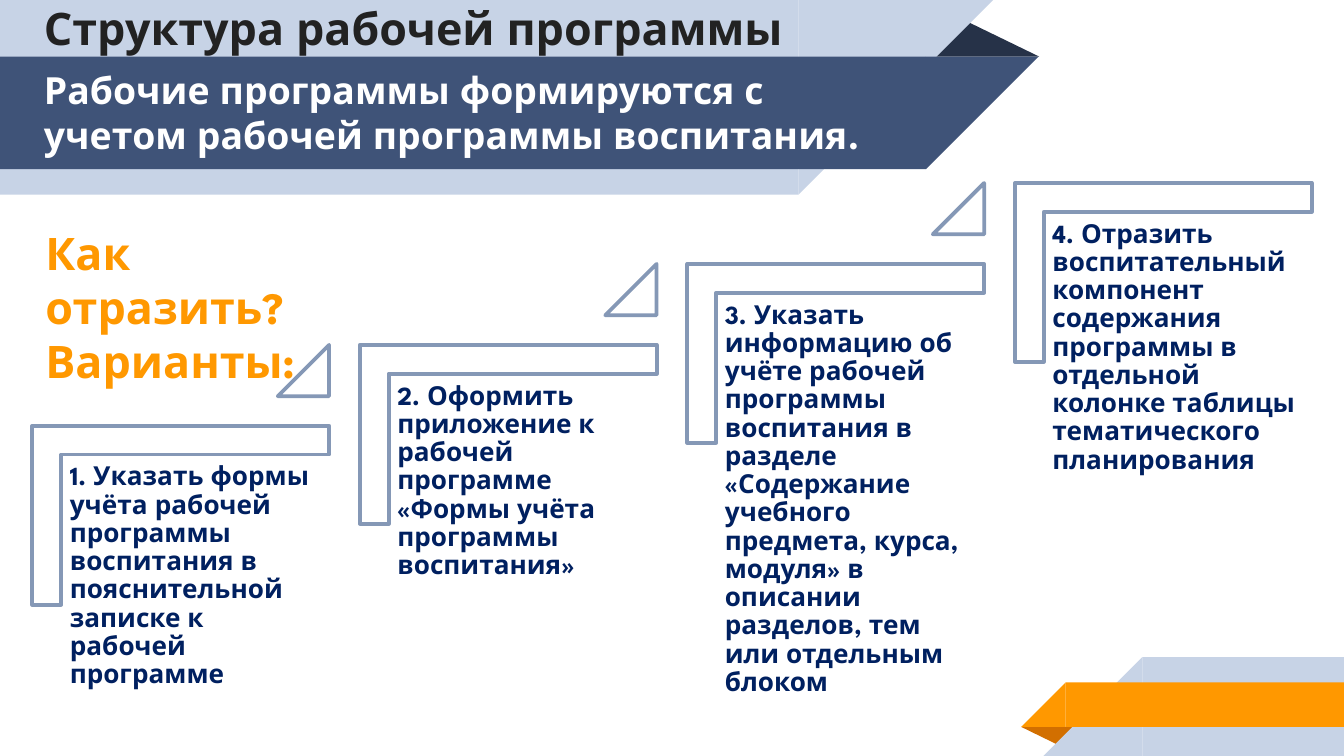
from dataclasses import dataclass

from pptx import Presentation
from pptx.dml.color import RGBColor
from pptx.enum.shapes import MSO_SHAPE
from pptx.enum.text import MSO_ANCHOR, MSO_AUTO_SIZE, PP_ALIGN
from pptx.util import Cm, Pt

RECTANGLE = MSO_SHAPE.RECTANGLE
RIGHT_TRIANGLE = MSO_SHAPE.RIGHT_TRIANGLE
TRIANGLE = MSO_SHAPE.ISOSCELES_TRIANGLE
CORNER = MSO_SHAPE.CORNER
TOP, MIDDLE = MSO_ANCHOR.TOP, MSO_ANCHOR.MIDDLE
LEFT = PP_ALIGN.LEFT
NO_AUTOFIT = MSO_AUTO_SIZE.NONE
TITLE_ONLY = 5


@dataclass(frozen=True)
class Theme:
    """Colours, font and type sizes of the deck."""
    font: str = "League Spartan"
    ink: str = "222222"
    white: str = "FFFFFF"
    pale: str = "C7D3E6"
    navy: str = "3F5378"
    navy_fold: str = "263248"
    orange: str = "FF9800"
    orange_fold: str = "D26F00"
    outline: str = "8598B6"
    step_text: str = "002060"
    heading_size: int = 24
    subtitle_size: int = 20
    step_size: int = 14


THEME = Theme()
SLIDE_WIDTH, SLIDE_HEIGHT = 25.4, 14.29
STEP_LEFT, STEP_TOP = 0.61, 8.05
STEP_RIGHT, STEP_RISE = 6.19, 1.53
STEP_WIDTH, STEP_HEIGHT = 5.61, 3.38
STEP_INDENT = 0.56
ARROW_SIZE = 0.97
STEPS = (
    "1. Указать формы учёта рабочей программы воспитания в пояснительной "
    "записке к рабочей программе",
    "2. Оформить приложение к рабочей программе «Формы учёта программы "
    "воспитания»",
    "3. Указать информацию об учёте рабочей программы воспитания в разделе "
    "«Содержание учебного предмета, курса, модуля» в описании разделов, тем "
    "или отдельным блоком",
    "4. Отразить воспитательный компонент содержания программы в отдельной "
    "колонке таблицы тематического планирования",
)


def add_figure(page, kind, left, top, width, height, color,
               rotation=0, adjustments=(), line=None):
    """Add a filled preset shape, outlined only when a line colour is given."""
    figure = page.shapes.add_shape(kind, Cm(left), Cm(top), Cm(width), Cm(height))
    figure.shadow.inherit = False
    figure.rotation = rotation
    for index, value in enumerate(adjustments):
        figure.adjustments[index] = value
    figure.fill.solid()
    figure.fill.fore_color.rgb = RGBColor.from_string(color)
    if line:
        figure.line.color.rgb = RGBColor.from_string(line)
        figure.line.width = Pt(2)
    else:
        figure.line.fill.background()


def add_right_band(page, top, width, height, color):
    """Add a band from the left edge with a slanted right end."""
    add_figure(page, RECTANGLE, 0, top, width, height, color)
    add_figure(page, RIGHT_TRIANGLE, width, top, height, height, color, 90)


def add_left_band(page, left, top, height, color):
    """Add a band to the right edge with a slanted left end."""
    add_figure(page, RECTANGLE, left, top, SLIDE_WIDTH - left, height, color)
    add_figure(page, RIGHT_TRIANGLE, left - height, top, height, height, color, 270)


def write_text(box, lines, size, color, inset=(0.25, 0.13), anchor=TOP, spacing=1.0):
    """Fill a box with bold left-aligned paragraphs."""
    frame = box.text_frame
    frame.word_wrap = True
    frame.auto_size = NO_AUTOFIT
    frame.vertical_anchor = anchor
    frame.margin_left = frame.margin_right = Cm(inset[0])
    frame.margin_top = frame.margin_bottom = Cm(inset[1])
    frame.text = "\n".join(lines)
    for para in frame.paragraphs:
        para.alignment = LEFT
        para.line_spacing = spacing
        para.font.name = THEME.font
        para.font.size = Pt(size)
        para.font.bold = True
        para.font.color.rgb = RGBColor.from_string(color)


def add_text(page, left, top, width, height, lines, size, color, **options):
    """Add a text box holding the given lines."""
    box = page.shapes.add_textbox(Cm(left), Cm(top), Cm(width), Cm(height))
    write_text(box, lines, size, color, **options)


def add_title(page, text):
    """Place the title placeholder in front of the ribbon."""
    title = page.shapes.title
    title.left, title.top, title.width, title.height = Cm(0.58), Cm(0), Cm(16.79), Cm(1.04)
    write_text(title, [text], THEME.heading_size, THEME.ink,
               inset=(0.25, 0.25), anchor=MIDDLE)
    page.shapes.element.append(title.element)


def add_ribbons(page):
    """Add the folded ribbons at the top left and bottom right."""
    add_figure(page, TRIANGLE, 17.48, 0.36, 2.16, 0.71, THEME.navy_fold,
               adjustments=(0.324,))
    add_right_band(page, 0, 15.09, 3.68, THEME.pale)
    add_right_band(page, 1.07, 17.5, 2.13, THEME.navy)
    add_figure(page, TRIANGLE, 19.3, 13.74, 1.09, 0.36, THEME.orange_fold,
               180, (0.324,))
    add_left_band(page, 21.59, 12.42, SLIDE_HEIGHT - 12.42, THEME.pale)
    add_left_band(page, 20.14, 12.9, 0.84, THEME.orange)


def add_step(page, index, text):
    """Add one stair step: corner, text and, before the last, an arrow."""
    left = STEP_LEFT + index * STEP_RIGHT
    top = STEP_TOP - index * STEP_RISE
    turn = (STEP_WIDTH - STEP_HEIGHT) / 2
    add_figure(page, CORNER, left + turn, top - turn, STEP_HEIGHT, STEP_WIDTH,
               THEME.white, 90, (0.161, 0.161), THEME.outline)
    add_text(page, left + STEP_INDENT, top + STEP_INDENT,
             STEP_WIDTH - STEP_INDENT, 4.42, [text], THEME.step_size,
             THEME.step_text, inset=(0.15, 0.15), spacing=0.9)
    if index < len(STEPS) - 1:
        add_figure(page, TRIANGLE, left + STEP_WIDTH - ARROW_SIZE, top - STEP_RISE,
                   ARROW_SIZE, ARROW_SIZE, THEME.white,
                   adjustments=(1,), line=THEME.outline)


def main():
    """Build and save the deck."""
    deck = Presentation()
    deck.slide_width, deck.slide_height = Cm(SLIDE_WIDTH), Cm(SLIDE_HEIGHT)
    page = deck.slides.add_slide(deck.slide_layouts[TITLE_ONLY])
    add_ribbons(page)
    add_title(page, "Структура рабочей программы")
    for index, text in enumerate(STEPS):
        add_step(page, index, text)
    add_text(page, 0.58, 1.14, 16.79, 1.96,
             ["Рабочие программы формируются с учетом рабочей программы воспитания."],
             THEME.subtitle_size, THEME.white)
    add_text(page, 0.61, 4.14, 6.71, 2.31, ["Как отразить?", "Варианты:"],
             THEME.heading_size, THEME.orange)
    deck.save("out.pptx")


if __name__ == "__main__":
    main()
